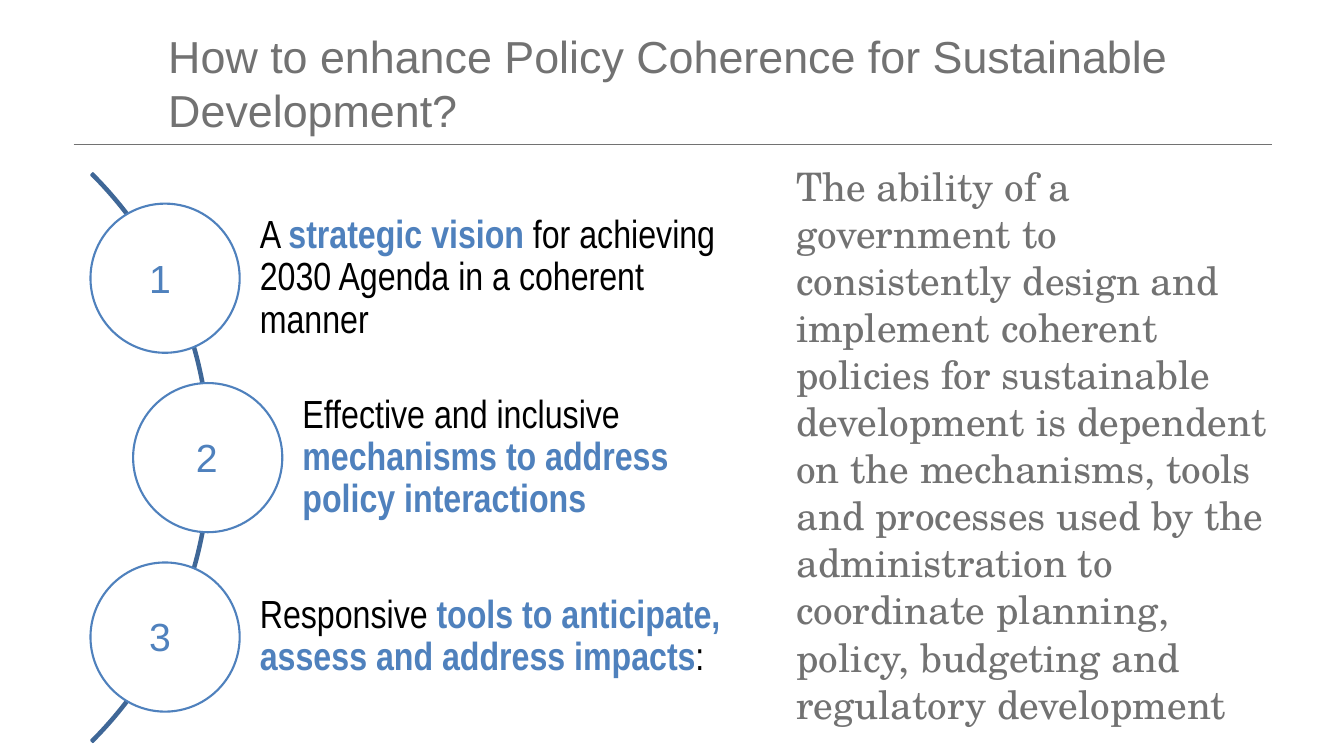
from math import sqrt

from lxml import etree
from pptx import Presentation
from pptx.dml.color import RGBColor
from pptx.enum.shapes import MSO_CONNECTOR as CONN, MSO_SHAPE as SHAPE
from pptx.enum.text import MSO_ANCHOR as ANCHOR, PP_ALIGN as ALIGN
from pptx.oxml.ns import qn
from pptx.util import Inches, Pt

SLIDE_W, SLIDE_H = 13.33, 7.5
COLORS = {"grey": "727272", "blue": "4F81BD", "arc": "3F6797",
          "black": "000000", "white": "FFFFFF"}

TITLE = "How to enhance Policy Coherence for Sustainable Development?"
BODY = ("The ability of a government to consistently design and implement "
        "coherent policies for sustainable development is dependent on the "
        "mechanisms, tools and processes used by the administration to "
        "coordinate planning, policy, budgeting and regulatory development")
# Each step: runs of (text, highlighted), and shift of the digit from the circle's centre
STEPS = [
    ([("A ", False), ("strategic vision ", True),
      ("for achieving 2030 Agenda in a coherent manner", False)], -0.05),
    ([("Effective and inclusive ", False),
      ("mechanisms to address policy interactions", True)], -0.01),
    ([("Responsive ", False),
      ("tools to anticipate, assess and address impacts", True),
      (":", False)], -0.05),
]


def rgb(name):
    return RGBColor.from_string(COLORS[name])


def add_text(slide, box, runs, size, font, anchor=ANCHOR.TOP,
             align=ALIGN.LEFT, insets=(0.1, 0.05, 0.1, 0.05)):
    """Add a one-paragraph text box; runs are (text, colour, bold)."""
    tb = slide.shapes.add_textbox(*map(Inches, box))
    tf = tb.text_frame
    tf.word_wrap = True
    tf.vertical_anchor = anchor
    tf.margin_left, tf.margin_top, tf.margin_right, tf.margin_bottom = map(Inches, insets)
    p = tf.paragraphs[0]
    p.alignment = align
    for text, color, bold in runs:
        r = p.add_run()
        r.text = text
        r.font.size, r.font.name, r.font.bold = Pt(size), font, bold
        r.font.color.rgb = rgb(color)
    return tb


def add_outline(slide, shape, box, line, fill=None):
    sp = slide.shapes.add_shape(shape, *map(Inches, box))
    sp.shadow.inherit = False
    if fill:
        sp.fill.solid()
        sp.fill.fore_color.rgb = rgb(fill)
    else:
        sp.fill.background()
    sp.line.color.rgb = rgb(line)
    sp.line.width = Pt(1.5)
    return sp


def add_header(slide, x, y, w, h):
    """Title over a thin rule that closes the region."""
    rule = slide.shapes.add_connector(
        CONN.STRAIGHT, *map(Inches, (x, y + h, x + w, y + h)))
    rule.line.color.rgb = rgb("grey")
    rule.line.width = Pt(0.5)
    etree.SubElement(rule._element.spPr, qn("a:effectLst"))
    indent = 0.84
    add_text(slide, (x + indent, y, w - indent - 0.24, h - 0.05),
             [(TITLE, "grey", False)], 32, "Arial", ANCHOR.MIDDLE)


def add_steps(slide, x, y, w, h):
    """Numbered circles strung along an arc, each with its text."""
    circle, text_h, pitch = 1.48, 1.19, 1.78
    arc_d, arc_r = 7.98, 3.96
    mid_x, mid_y = x - 2.79, y + h / 2

    # Arc through the circles
    arc = add_outline(slide, SHAPE.BLOCK_ARC,
                      (mid_x - arc_d / 2, mid_y - arc_d / 2, arc_d, arc_d), "arc")
    for i, value in enumerate((189, 27, 0.003)):
        arc.adjustments[i] = value

    for i, (parts, shift) in enumerate(STEPS):
        dy = (i - 1) * pitch
        cx, cy = mid_x + sqrt(arc_r ** 2 - dy ** 2), mid_y + dy
        # Step text, starting at the circle's centre
        runs = [(t, "blue" if key else "black", key) for t, key in parts]
        tb = add_text(slide, (cx, cy - text_h / 2, x + w - cx, text_h), runs, 28,
                      "Arial Narrow", ANCHOR.MIDDLE, insets=(0.94, 0.08, 0.08, 0.08))
        tb.text_frame.paragraphs[0].line_spacing = 0.9
        # Circle and digit
        add_outline(slide, SHAPE.OVAL,
                    (cx - circle / 2, cy - circle / 2, circle, circle), "blue", "white")
        add_text(slide, (cx + shift - 0.24, cy - 0.29, 0.48, 0.57),
                 [(str(i + 1), "blue", False)], 28, "Arial", align=ALIGN.CENTER)


def add_statement(slide, x, y, w, h):
    add_text(slide, (x, y, w, h), [(BODY, "grey", False)], 28, "TeX Gyre Schola")


def main():
    prs = Presentation()
    prs.slide_width, prs.slide_height = Inches(SLIDE_W), Inches(SLIDE_H)
    slide = prs.slides.add_slide(prs.slide_layouts[6])
    add_header(slide, 0.73, 0.26, 11.89, 1.17)
    add_statement(slide, 7.8, 1.56, 4.9, 5.76)
    add_steps(slide, 0.89, 1.72, 6.61, 5.64)
    prs.save("out.pptx")


if __name__ == "__main__":
    main()
